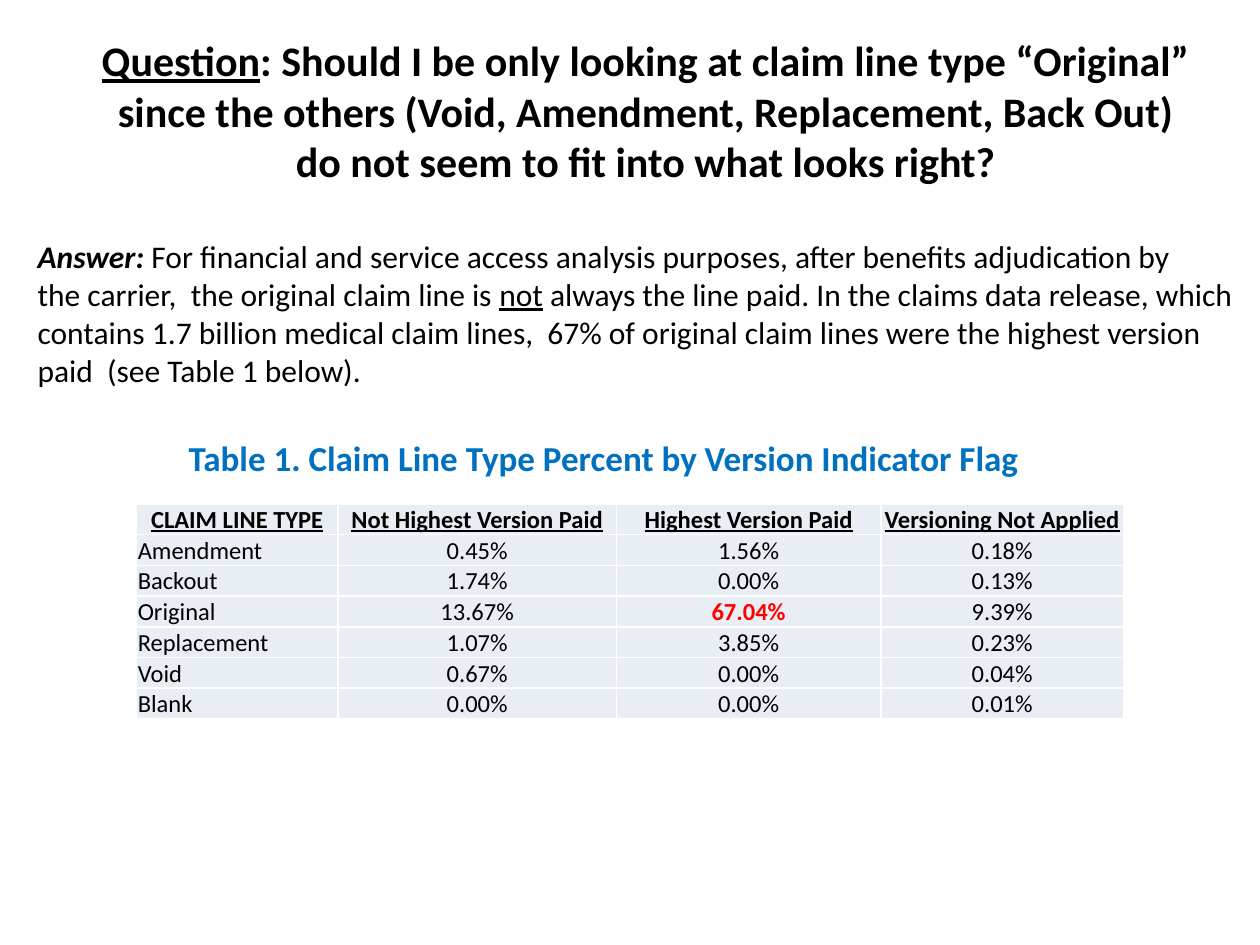
"""Build a question-and-answer slide with a table of claim line types by version flag."""
from lxml import etree
from pptx import Presentation
from pptx.dml.color import RGBColor
from pptx.enum.text import MSO_ANCHOR, PP_ALIGN
from pptx.oxml.ns import qn
from pptx.util import Inches, Pt

LEFT, CENTER = PP_ALIGN.LEFT, PP_ALIGN.CENTER
TOP, MIDDLE, BOTTOM = MSO_ANCHOR.TOP, MSO_ANCHOR.MIDDLE, MSO_ANCHOR.BOTTOM
BLACK = RGBColor(0x00, 0x00, 0x00)
BLUE = RGBColor(0x00, 0x70, 0xC0)
RED = RGBColor(0xFF, 0x00, 0x00)
WHITE = RGBColor(0xFF, 0xFF, 0xFF)
PALE = RGBColor(0xE9, 0xED, 0xF4)

deck = Presentation()
deck.slide_width, deck.slide_height = Inches(10), Inches(7.5)
page = deck.slides.add_slide(deck.slide_layouts[6])
COLUMN, ROW = deck.slide_width / 120, deck.slide_height / 90


def grid(left, top, width, height):
    return [int(n * unit) for n, unit in zip((left, top, width, height), (COLUMN, ROW) * 2)]


def write(frame, paragraphs, align, size, color):
    for index, spans in enumerate(paragraphs):
        para = frame.add_paragraph() if index else frame.paragraphs[0]
        para.alignment = align
        for text, style in spans:
            span = para.add_run()
            span.text = text
            span.font.color.rgb = style.get("color", color)
            formats = {"name": "Calibri", "size": Pt(size), "bold": False} | style
            for name, value in formats.items():
                if name != "color":
                    setattr(span.font, name, value)


BOLD = {"bold": True}
UNDERLINED = {"underline": True}
QUESTION = [[
    ("Question", BOLD | UNDERLINED),
    (": Should I be only looking at claim line type “Original” since the others "
     "(Void, Amendment, Replacement, Back Out) do not seem to fit into what looks right?", BOLD),
]]
CAPTION = [[("Table 1. Claim Line Type Percent by Version Indicator Flag", BOLD)]]
ANSWER = [
    [("Answer: ", BOLD | {"italic": True}),
     ("For financial and service access analysis purposes, after benefits adjudication by", {})],
    [("the carrier,  the original claim line is ", {}),
     ("not", UNDERLINED),
     (" always the line paid. In the claims data release, which contains 1.7 billion medical "
      "claim lines,  67% of original claim lines were the highest version  paid  "
      "(see Table 1 below).", {})],
]
BOXES = [
    (grid(8, 3, 107, 15), QUESTION, CENTER, MIDDLE, 24, BLACK),
    (grid(4, 41, 107, 5.25), CAPTION, CENTER, TOP, 20, BLUE),
    (grid(2.4, 22, 118, 15.75), ANSWER, LEFT, TOP, 18, BLACK),
]
for place, paragraphs, align, anchor, size, color in BOXES:
    frame = page.shapes.add_textbox(*place).text_frame
    frame.word_wrap = True
    frame.vertical_anchor = anchor
    write(frame, paragraphs, align, size, color)

CLAIM_LINES = [
    ("CLAIM LINE TYPE", "Not Highest Version Paid", "Highest Version Paid", "Versioning Not Applied"),
    ("Amendment", "0.45%", "1.56%", "0.18%"),
    ("Backout", "1.74%", "0.00%", "0.13%"),
    ("Original", "13.67%", "67.04%", "9.39%"),
    ("Replacement", "1.07%", "3.85%", "0.23%"),
    ("Void", "0.67%", "0.00%", "0.04%"),
    ("Blank", "0.00%", "0.00%", "0.01%"),
]
CELL_FORMAT = {
    "vertical_anchor": BOTTOM, "margin_left": Inches(0.01), "margin_right": Inches(0.01),
    "margin_top": Inches(0.01), "margin_bottom": 0,
}
table = page.shapes.add_table(len(CLAIM_LINES), 4, *grid(13, 48, 94, 20.5)).table
table.first_row = table.horz_banding = False
for column, width in zip(table.columns, (19.2, 26.5, 25.2, 23.1)):
    column.width = int(width * COLUMN)

for r, values in enumerate(CLAIM_LINES):
    for c, text in enumerate(values):
        cell = table.cell(r, c)
        for name, value in CELL_FORMAT.items():
            setattr(cell, name, value)
        style = BOLD | UNDERLINED if r == 0 else {}
        if text == "67.04%":
            style = BOLD | {"color": RED}
        align = LEFT if r and c == 0 else CENTER
        write(cell.text_frame, [[(text, style)]], align, 14, BLACK)
        properties = cell._tc.get_or_add_tcPr()
        for side in ("lnL", "lnR", "lnT", "lnB"):
            border = etree.SubElement(properties, qn(f"a:{side}"), w=str(Pt(1)))
            paint = etree.SubElement(border, qn("a:solidFill"))
            etree.SubElement(paint, qn("a:srgbClr"), val=str(WHITE))
        cell.fill.solid()
        cell.fill.fore_color.rgb = PALE

deck.save("out.pptx")
